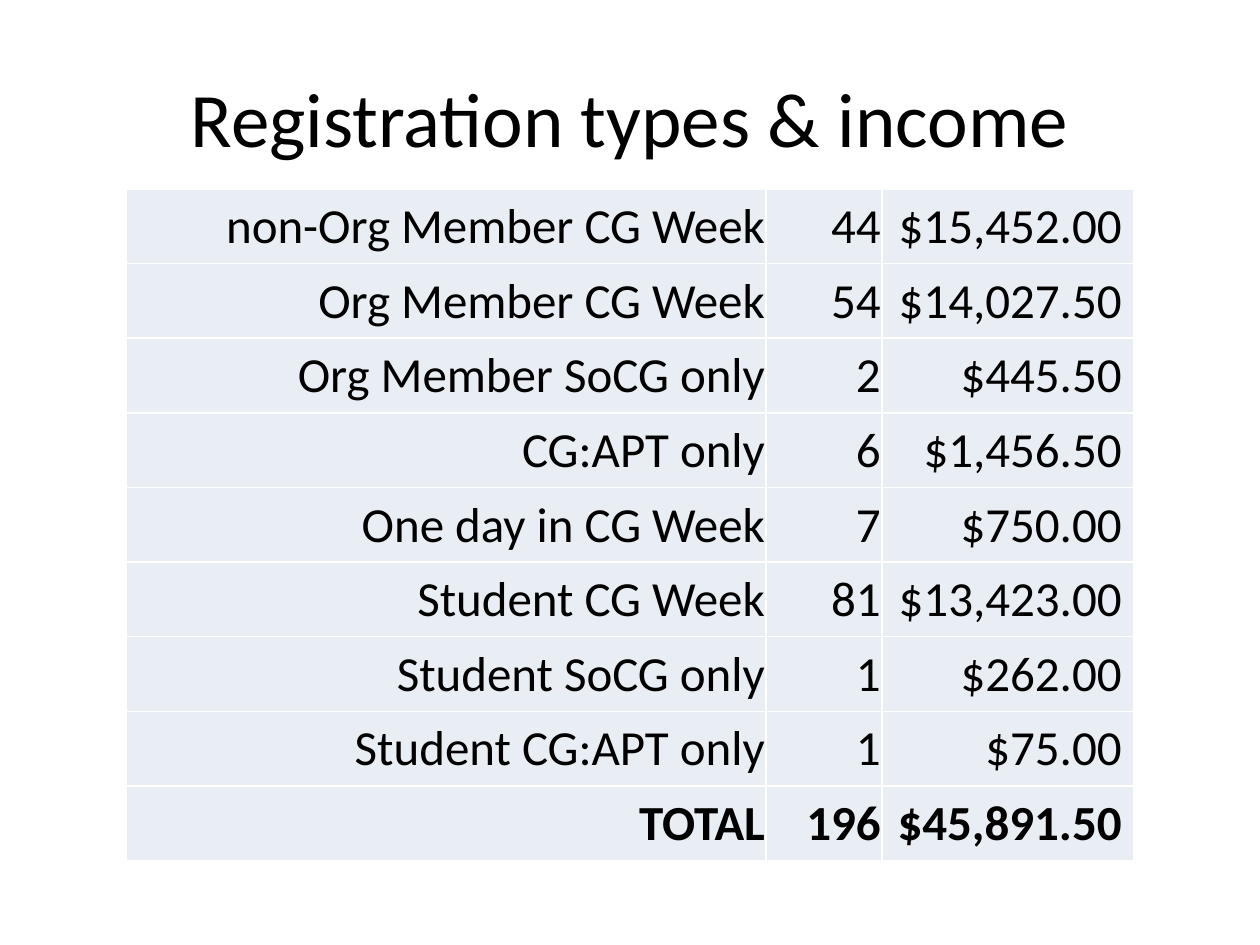
from dataclasses import dataclass

from lxml.etree import SubElement
from pptx import Presentation
from pptx.dml.color import RGBColor
from pptx.enum.text import MSO_ANCHOR as Anchor, PP_ALIGN as Align
from pptx.oxml.ns import qn
from pptx.util import Inches, Pt

BLACK = RGBColor(0, 0, 0)
WHITE = RGBColor(0xFF, 0xFF, 0xFF)
PALE_BLUE = RGBColor(0xE9, 0xED, 0xF4)
FONT = "Calibri"
WIDTH, HEIGHT = Inches(10), Inches(7.5)
TABLE_WIDTH, TABLE_HEIGHT = 0.8 * WIDTH, Inches(5.33)
COLUMN_SHARES = (0.635, 0.115, 0.25)


@dataclass(frozen=True)
class Registration:
    label: str
    count: int
    income: float
    bold: bool = False

    def texts(self) -> tuple[str, str, str]:
        return self.label, str(self.count), f"${self.income:,.2f} "


REGISTRATIONS = [
    Registration("non-Org Member CG Week", 44, 15452),
    Registration("Org Member CG Week", 54, 14027.5),
    Registration("Org Member SoCG only", 2, 445.5),
    Registration("CG:APT only", 6, 1456.5),
    Registration("One day in CG Week", 7, 750),
    Registration("Student CG Week", 81, 13423),
    Registration("Student SoCG only", 1, 262),
    Registration("Student CG:APT only", 1, 75),
]
TOTAL = Registration(
    "TOTAL",
    sum(row.count for row in REGISTRATIONS),
    sum(row.income for row in REGISTRATIONS),
    bold=True,
)


def write(tf, text: str, *, size: float, align: Align, bold: bool = False) -> None:
    p = tf.paragraphs[0]
    p.alignment = align
    r = p.add_run()
    r.text = text
    r.font.name = FONT
    r.font.size = Pt(size)
    r.font.bold = bold
    r.font.color.rgb = BLACK


def add_borders(cell, color: RGBColor, width: float) -> None:
    props = cell._tc.get_or_add_tcPr()
    for side in ("lnL", "lnR", "lnT", "lnB"):
        line = SubElement(props, qn(f"a:{side}"), w=str(Pt(width)))
        fill = SubElement(line, qn("a:solidFill"))
        SubElement(fill, qn("a:srgbClr"), val=str(color))


def format_cell(cell) -> None:
    cell.margin_left = cell.margin_right = cell.margin_top = Inches(0.01)
    cell.margin_bottom = 0
    cell.vertical_anchor = Anchor.MIDDLE
    add_borders(cell, WHITE, 1)
    cell.fill.solid()
    cell.fill.fore_color.rgb = PALE_BLUE


def add_title(s, text: str) -> None:
    sp = s.shapes.title
    sp.left, sp.top = int(0.05 * WIDTH), int(0.04 * HEIGHT)
    sp.width, sp.height = int(0.9 * WIDTH), Inches(1.25)
    sp.text_frame.vertical_anchor = Anchor.MIDDLE
    write(sp.text_frame, text, size=44, align=Align.CENTER)


def add_registration_table(s, rows: list[Registration]) -> None:
    frame = s.shapes.add_table(
        len(rows), len(COLUMN_SHARES),
        int(0.1 * WIDTH), int(0.2 * HEIGHT), int(TABLE_WIDTH), TABLE_HEIGHT,
    )
    table = frame.table
    table.first_row = table.horz_banding = False
    for column, share in zip(table.columns, COLUMN_SHARES):
        column.width = int(share * TABLE_WIDTH)
    for table_row, row in zip(table.rows, rows):
        for cell, text in zip(table_row.cells, row.texts()):
            format_cell(cell)
            write(cell.text_frame, text, size=28, align=Align.RIGHT, bold=row.bold)


def main() -> None:
    prs = Presentation()
    prs.slide_width, prs.slide_height = WIDTH, HEIGHT
    s = prs.slides.add_slide(prs.slide_layouts[5])
    add_title(s, "Registration types & income")
    add_registration_table(s, [*REGISTRATIONS, TOTAL])
    prs.save("out.pptx")


if __name__ == "__main__":
    main()
